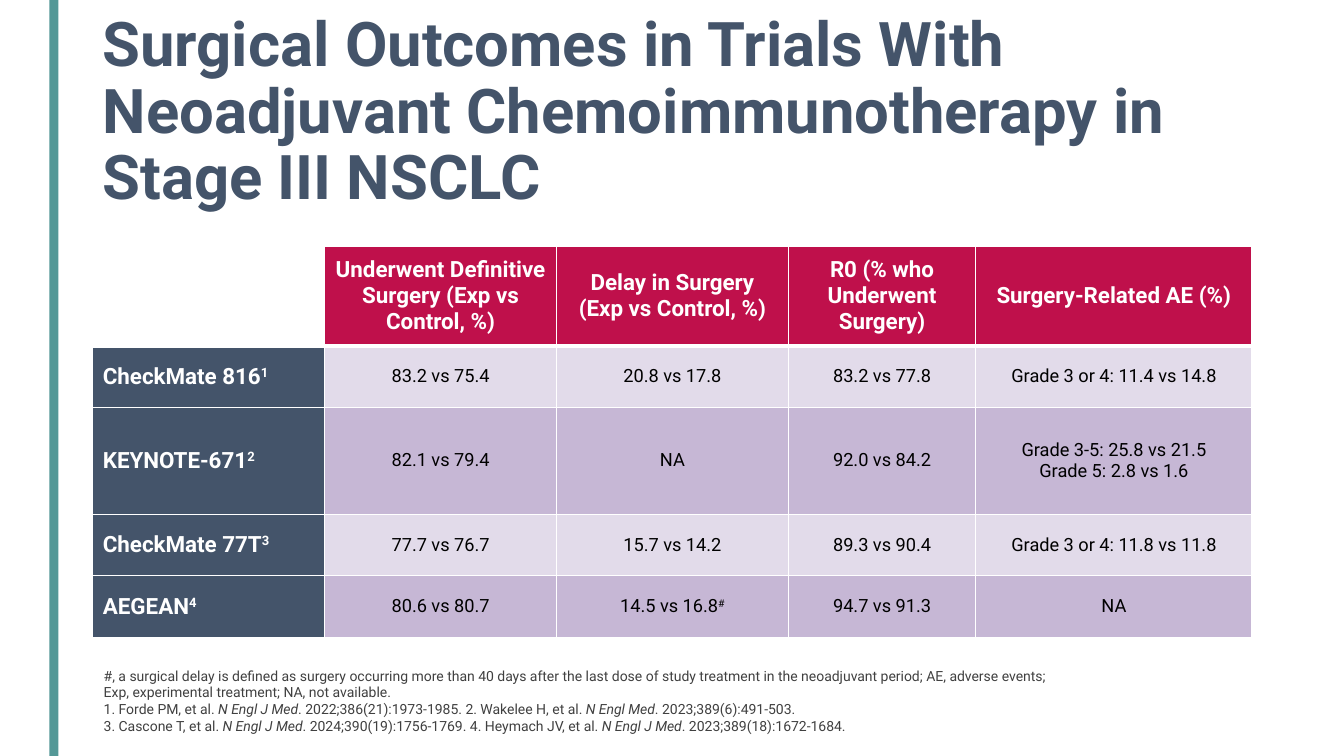
from lxml import etree
from pptx import Presentation
from pptx import util as u
from pptx.dml.color import RGBColor
from pptx.enum import shapes, text
from pptx.oxml.ns import qn

FONT = "Roboto"
WHITE, SLATE, CRIMSON, TEAL = "FFFFFF", "44546A", "BF104B", "549897"
BANDS = ["E2DBEA", "C6B7D5"]

TITLE = ("Surgical Outcomes in Trials With Neoadjuvant "
         "Chemoimmunotherapy in Stage III NSCLC")
# Text between bars is superscript in the table and italic in the notes
HEADER = ["", "Underwent Definitive Surgery (Exp vs Control, %)",
          "Delay in Surgery (Exp vs Control, %)",
          "R0 (% who Underwent Surgery)", "Surgery-Related AE (%)"]
TRIALS = [
    ["CheckMate 816|1|", "83.2 vs 75.4", "20.8 vs 17.8", "83.2 vs 77.8",
     "Grade 3 or 4: 11.4 vs 14.8"],
    ["KEYNOTE-671|2|", "82.1 vs 79.4", "NA", "92.0 vs 84.2",
     "Grade 3-5: 25.8 vs 21.5\nGrade 5: 2.8 vs 1.6"],
    ["CheckMate 77T|3|", "77.7 vs 76.7", "15.7 vs 14.2", "89.3 vs 90.4",
     "Grade 3 or 4: 11.8 vs 11.8"],
    ["AEGEAN|4|", "80.6 vs 80.7", "14.5 vs 16.8|#|", "94.7 vs 91.3", "NA"],
]
NOTES = (
    "#, a surgical delay is defined as surgery occurring more than 40 days after "
    "the last dose of study treatment in the neoadjuvant period; AE, adverse "
    "events; Exp, experimental treatment; NA, not available.\n"
    "1. Forde PM, et al. |N Engl J Med|. 2022;386(21):1973-1985. "
    "2. Wakelee H, et al. |N Engl Med|. 2023;389(6):491-503.\n"
    "3. Cascone T, et al. |N Engl J Med|. 2024;390(19):1756-1769. "
    "4. Heymach JV, et al. |N Engl J Med|. 2023;389(18):1672-1684.")
COLUMNS = [165.6, 165.6, 165.6, 133.9, 197.3]
ROWS = [71.3, 43.9, 76.5, 43.9, 43.9]


def rgb(color):
    return RGBColor.from_string(color)


def superscript(r):
    r.font._element.set("baseline", "30000")


def italic(r):
    r.font.italic = True


def write(tf, content, size, color, bold=False, align=None, mark=superscript):
    """Fill a text frame; every second piece between bars gets the mark."""
    for i, line in enumerate(content.split("\n")):
        p = tf.add_paragraph() if i else tf.paragraphs[0]
        p.alignment = align
        for j, piece in enumerate(line.split("|")):
            if not piece:
                continue
            r = p.add_run()
            r.text = piece
            r.font.name, r.font.size, r.font.bold = FONT, u.Pt(size), bold
            r.font.color.rgb = rgb(color)
            if j % 2:
                mark(r)


def add_text(s, box, content, size, color, anchor, **style):
    sp = s.shapes.add_textbox(*(u.Pt(v) for v in box))
    tf = sp.text_frame
    tf.word_wrap = True
    tf.vertical_anchor = anchor
    write(tf, content, size, color, **style)
    return tf


def add_bar(s, box, color):
    sp = s.shapes.add_shape(shapes.MSO_SHAPE.RECTANGLE, *(u.Pt(v) for v in box))
    sp.shadow.inherit = False
    sp.fill.solid()
    sp.fill.fore_color.rgb = rgb(color)
    sp.line.fill.background()


def set_borders(cell, widths):
    """White borders, widths in the order left, right, top, bottom."""
    tc_pr = cell._tc.get_or_add_tcPr()
    for i, (side, width) in enumerate(zip("LRTB", widths)):
        ln = etree.Element(qn(f"a:ln{side}"), w=str(u.Pt(width)))
        fill = etree.SubElement(ln, qn("a:solidFill"))
        etree.SubElement(fill, qn("a:srgbClr"), val=WHITE)
        tc_pr.insert(i, ln)


def add_outcomes(s, left, top):
    table = s.shapes.add_table(len(ROWS), len(COLUMNS), u.Pt(left), u.Pt(top),
                               u.Pt(sum(COLUMNS)), u.Pt(sum(ROWS))).table
    for column, width in zip(table.columns, COLUMNS):
        column.width = u.Pt(width)
    for row, height in zip(table.rows, ROWS):
        row.height = u.Pt(height)
    center = text.PP_ALIGN.CENTER
    for i, values in enumerate([HEADER] + TRIALS):
        for j, value in enumerate(values):
            cell = table.cell(i, j)
            cell.vertical_anchor = text.MSO_ANCHOR.MIDDLE
            # Header and trial names are bold white, results are plain black
            if i == 0 or j == 0:
                fill = CRIMSON if i == 0 else SLATE
                write(cell.text_frame, value, 16, WHITE, True,
                      center if i == 0 else None)
            else:
                fill = BANDS[(i - 1) % 2]
                write(cell.text_frame, value, 13, "000000", align=center)
            if i == j == 0:
                cell.fill.background()
            else:
                cell.fill.solid()
                cell.fill.fore_color.rgb = rgb(fill)
            set_borders(cell, [1, 1, 3 if i == 1 else 1, 3 if i == 0 else 1])


def main():
    prs = Presentation()
    prs.slide_width, prs.slide_height = u.Pt(960), u.Pt(540)
    s = prs.slides.add_slide(prs.slide_layouts[6])

    # Side bar and title
    add_bar(s, (35.2, 0, 6.5, 540), TEAL)
    tf = add_text(s, (66.2, 28.8, 804.2, 104.4), TITLE, 44, SLATE,
                  text.MSO_ANCHOR.MIDDLE, bold=True)
    tf.paragraphs[0].line_spacing = 0.9

    # Results and notes
    add_outcomes(s, 66.3, 175.7)
    add_text(s, (67, 473, 693.4, 61.2), NOTES, 10, "404040",
             text.MSO_ANCHOR.TOP, mark=italic)
    prs.save("out.pptx")


if __name__ == "__main__":
    main()
